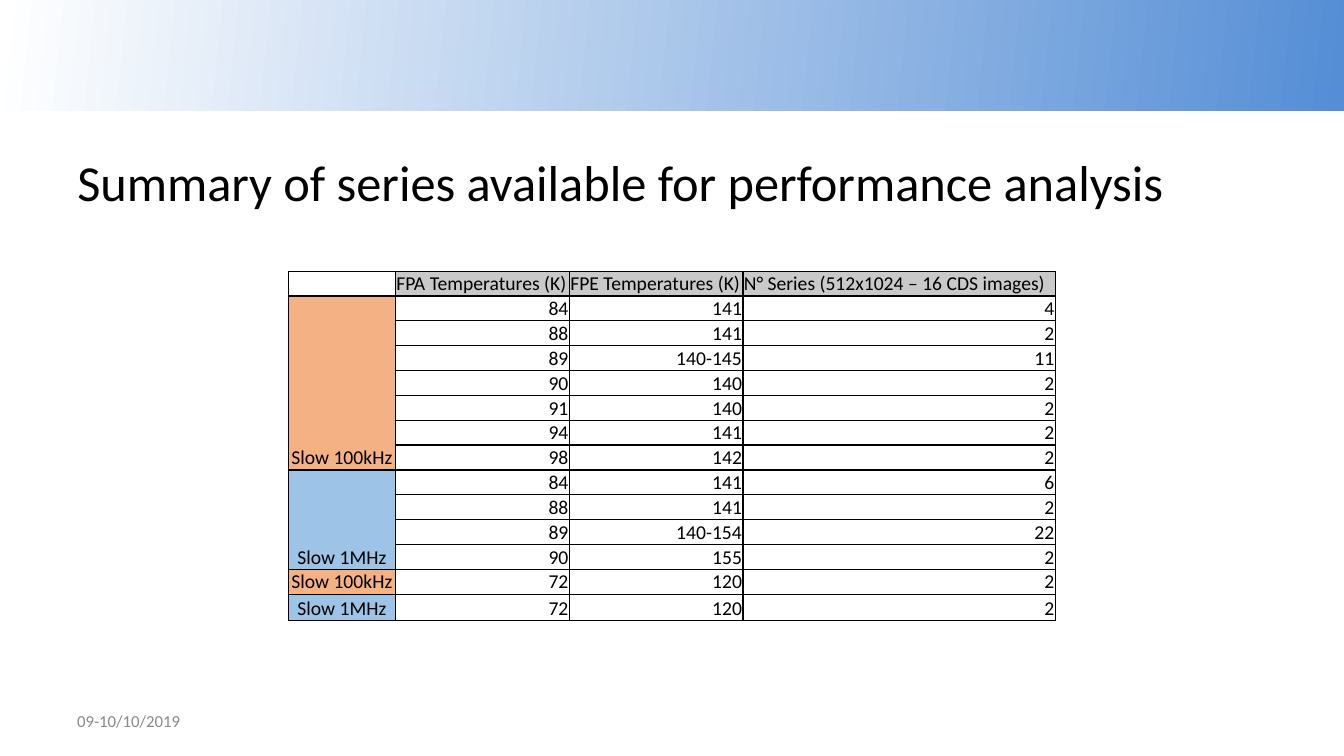
from dataclasses import dataclass

from lxml.etree import SubElement
from pptx import Presentation
from pptx.dml.color import RGBColor
from pptx.enum.shapes import MSO_SHAPE
from pptx.enum.text import MSO_ANCHOR, MSO_AUTO_SIZE, PP_ALIGN
from pptx.oxml.ns import qn
from pptx.util import Pt


@dataclass(frozen=True)
class Theme:
    font: str = "Calibri"
    text: str = "000000"
    muted: str = "898989"
    white: str = "FFFFFF"
    band: str = "558ED5"
    header: str = "C9C9C9"
    orange: str = "F4B183"
    blue: str = "9DC3E6"
    title_size: int = 36
    table_size: int = 14
    date_size: int = 12


theme = Theme()


def write(frame, text, size, color=theme.text, align=PP_ALIGN.LEFT, anchor=MSO_ANCHOR.TOP):
    frame.word_wrap = True
    frame.auto_size = MSO_AUTO_SIZE.NONE
    frame.vertical_anchor = anchor
    paragraph = frame.paragraphs[0]
    paragraph.alignment = align
    run = paragraph.add_run()
    run.text = text
    run.font.name = theme.font
    run.font.size = Pt(size)
    run.font.color.rgb = RGBColor.from_string(color)


def format_cell(cell, text, align, fill=None):
    cell.margin_left = cell.margin_right = cell.margin_top = Pt(0.7)
    cell.margin_bottom = Pt(0)
    cell.vertical_anchor = MSO_ANCHOR.BOTTOM
    paragraph = cell.text_frame.paragraphs[0]
    paragraph.alignment = align
    if text:
        run = paragraph.add_run()
        run.text = text
        run.font.name = theme.font
        run.font.size = Pt(theme.table_size)
        run.font.color.rgb = RGBColor.from_string(theme.text)
    else:
        SubElement(paragraph._p, qn("a:endParaRPr"), sz=str(theme.table_size * 100))
    # Borders come before the fill in the cell properties
    properties = cell._tc.get_or_add_tcPr()
    for side in ("a:lnL", "a:lnR", "a:lnT", "a:lnB"):
        line = SubElement(properties, qn(side), w=str(Pt(1)))
        SubElement(SubElement(line, qn("a:solidFill")), qn("a:srgbClr"), val=theme.text)
    if fill:
        cell.fill.solid()
        cell.fill.fore_color.rgb = RGBColor.from_string(fill)
    else:
        cell.fill.background()


presentation = Presentation()
presentation.slide_width, presentation.slide_height = Pt(960), Pt(540)
slide = presentation.slides.add_slide(presentation.slide_layouts[5])

# Gradient band
band = slide.shapes.add_shape(MSO_SHAPE.RECTANGLE, Pt(0), Pt(0), Pt(960), Pt(79.2))
band.shadow.inherit = False
band.line.fill.background()
band.fill.gradient()
band.fill.gradient_angle = 174
for stop, color, position in zip(band.fill.gradient_stops, (theme.band, theme.white), (0, 1)):
    stop.color.rgb = RGBColor.from_string(color)
    stop.position = position

# Title
title = slide.shapes.title
title.left, title.top, title.width, title.height = Pt(48), Pt(104), Pt(864), Pt(60)
write(title.text_frame, "Summary of series available for performance analysis", theme.title_size)

# Date
date = slide.shapes.add_textbox(Pt(48), Pt(500.5), Pt(224), Pt(28.75))
write(date.text_frame, "09-10/10/2019", theme.date_size, color=theme.muted, anchor=MSO_ANCHOR.MIDDLE)

# Series table: mode, colour and its rows
headers = ["", "FPA Temperatures (K)", "FPE Temperatures (K)", "N° Series (512x1024 – 16 CDS images)"]
groups = [
    ("Slow 100kHz", theme.orange, [
        ("84", "141", "4"), ("88", "141", "2"), ("89", "140-145", "11"), ("90", "140", "2"),
        ("91", "140", "2"), ("94", "141", "2"), ("98", "142", "2")]),
    ("Slow 1MHz", theme.blue, [
        ("84", "141", "6"), ("88", "141", "2"), ("89", "140-154", "22"), ("90", "155", "2")]),
    ("Slow 100kHz", theme.orange, [("72", "120", "2")]),
    ("Slow 1MHz", theme.blue, [("72", "120", "2")]),
]
widths = [76.4, 124.3, 124, 223.1]
row_count = 1 + sum(len(rows) for _, _, rows in groups)
row_height, last_height = 17.6, 18.9
frame = slide.shapes.add_table(row_count, len(widths), Pt(206), Pt(193.7),
                               Pt(sum(widths)), Pt(row_height * (row_count - 1) + last_height))
table = frame.table
table.first_row = table.horz_banding = False
for column, width in zip(table.columns, widths):
    column.width = Pt(width)
for row in table.rows:
    row.height = Pt(row_height)
table.rows[row_count - 1].height = Pt(last_height)

# Header row
for column, text in enumerate(headers):
    format_cell(table.cell(0, column), text, PP_ALIGN.LEFT, theme.header if text else None)

# Grouped rows
first = 1
for mode, color, rows in groups:
    for offset, values in enumerate(rows):
        format_cell(table.cell(first + offset, 0), "" if offset else mode, PP_ALIGN.CENTER, color)
        for column, value in enumerate(values, start=1):
            format_cell(table.cell(first + offset, column), value, PP_ALIGN.RIGHT)
    if len(rows) > 1:
        table.cell(first, 0).merge(table.cell(first + len(rows) - 1, 0))
    first += len(rows)

presentation.save("out.pptx")
